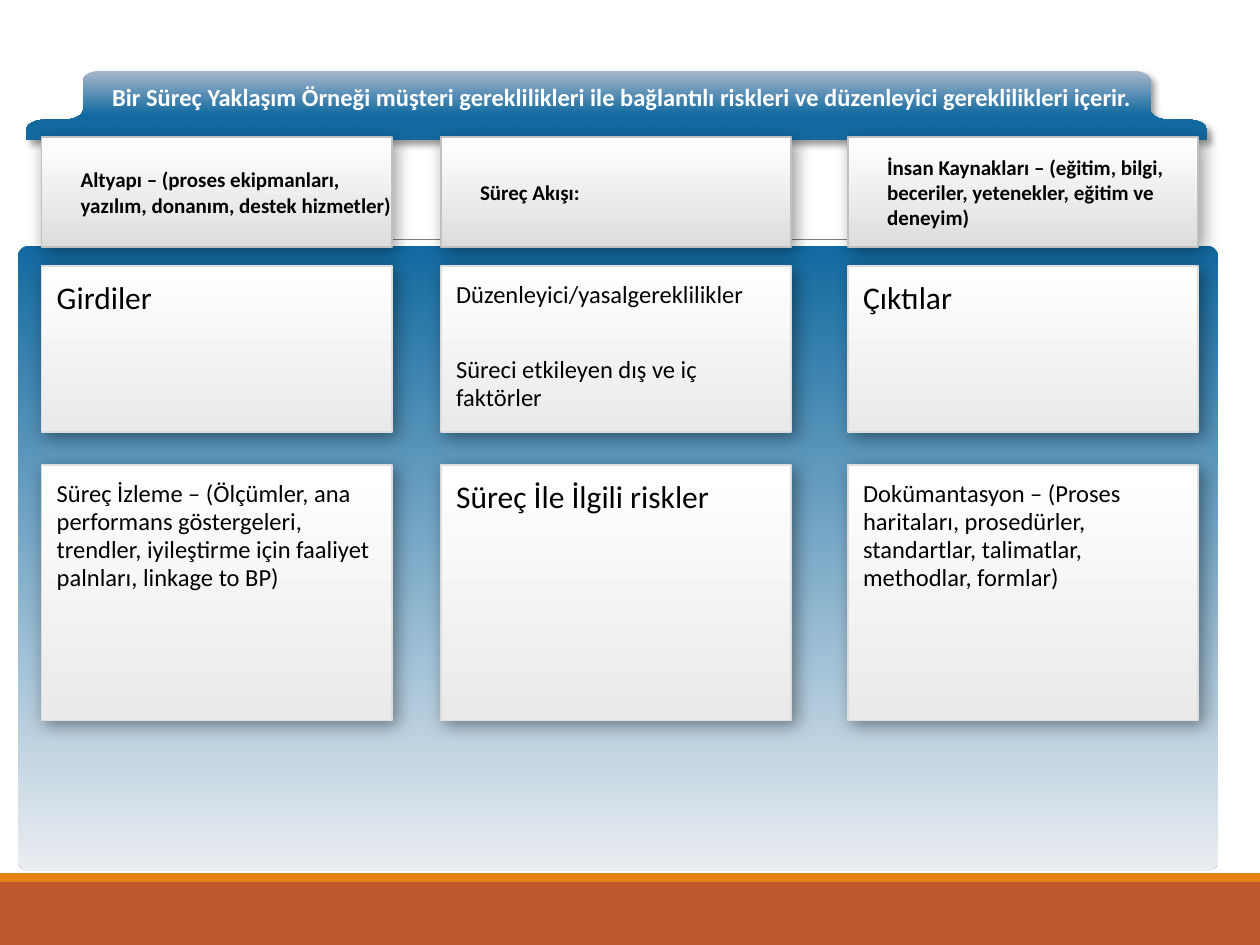
import math
from lxml import etree
from pptx import Presentation
from pptx.dml.color import RGBColor
from pptx.enum.shapes import MSO_CONNECTOR, MSO_SHAPE
from pptx.enum.text import MSO_ANCHOR, PP_ALIGN
from pptx.oxml.ns import qn
from pptx.util import Inches, Pt

RECT, ROUND = MSO_SHAPE.RECTANGLE, MSO_SHAPE.ROUNDED_RECTANGLE
TOP, MIDDLE, LEFT = MSO_ANCHOR.TOP, MSO_ANCHOR.MIDDLE, PP_ALIGN.LEFT

BLACK = RGBColor(0x00, 0x00, 0x00)
WHITE = RGBColor(0xFF, 0xFF, 0xFF)
BLUE = RGBColor(0x12, 0x6A, 0xA0)
BLUE_GREY = RGBColor(0xAA, 0xB8, 0xCC)
PALE = RGBColor(0xEA, 0xED, 0xF1)
HEAD_END = RGBColor(0xDD, 0xDD, 0xDD)
HEAD_LINE = RGBColor(0xC0, 0xC0, 0xC0)
CARD_END = RGBColor(0xEA, 0xEA, 0xEA)
CARD_LINE = RGBColor(0xDD, 0xDD, 0xDD)
RULE = RGBColor(0x80, 0x80, 0x80)
RUST = RGBColor(0xBD, 0x58, 0x2C)
ORANGE = RGBColor(0xE4, 0x83, 0x12)

# Content
TITLE = ("Bir Süreç Yaklaşım Örneği müşteri gereklilikleri ile bağlantılı "
         "riskleri ve düzenleyici gereklilikleri içerir.")
HEADS = [
    "Altyapı – (proses ekipmanları, yazılım, donanım, destek hizmetler)",
    "Süreç Akışı:",
    "İnsan Kaynakları – (eğitim, bilgi, beceriler, yetenekler, eğitim ve deneyim)",
]
INPUT_ROW = [
    (18, ["Girdiler"]),
    (14, ["Düzenleyici/yasalgereklilikler", "Süreci etkileyen dış ve iç faktörler"]),
    (18, ["Çıktılar"]),
]
CONTROL_ROW = [
    (14, ["Süreç İzleme – (Ölçümler, ana performans göstergeleri, trendler, "
          "iyileştirme için faaliyet palnları, linkage to BP)"]),
    (18, ["Süreç İle İlgili riskler"]),
    (14, ["Dokümantasyon – (Proses haritaları, prosedürler, standartlar, "
          "talimatlar, methodlar, formlar)"]),
]

# Grid
COLS = [0.33, 3.5, 6.73]
COL_W = 2.78
HEAD_Y, HEAD_H = 1.09, 0.87
CARD_ROWS = [(2.11, 1.32, INPUT_ROW), (3.69, 2.03, CONTROL_ROW)]


def gradient(sp, start, end, end_pos=1.0):
    sp.fill.gradient()
    sp.fill.gradient_angle = 270
    first, last = sp.fill.gradient_stops
    first.color.rgb, first.position = start, 0
    last.color.rgb, last.position = end, end_pos


def drop_shadow(sp, blur):
    sp.shadow.inherit = False
    effects = sp.element.spPr.find(qn("a:effectLst"))
    outer = etree.SubElement(effects, qn("a:outerShdw"), blurRad=str(Pt(blur)),
                             dist=str(Pt(3)), dir=str(45 * 60000),
                             algn="tl", rotWithShape="0")
    color = etree.SubElement(outer, qn("a:srgbClr"), val="000000")
    etree.SubElement(color, qn("a:alpha"), val="40000")


def add_block(x, y, w, h, kind=RECT, fill=None):
    sp = slide.shapes.add_shape(kind, Inches(x), Inches(y), Inches(w), Inches(h))
    sp.shadow.inherit = False
    sp.line.fill.background()
    if fill is not None:
        sp.fill.solid()
        sp.fill.fore_color.rgb = fill
    return sp


def set_text(sp, paragraphs, size, color, anchor, insets, bold=False, spacing=1.0):
    tf = sp.text_frame
    tf.word_wrap = True
    tf.vertical_anchor = anchor
    tf.margin_left, tf.margin_top, tf.margin_right, tf.margin_bottom = map(Inches, insets)
    tf.text = "\n".join(paragraphs)
    for i, p in enumerate(tf.paragraphs):
        p.alignment = LEFT
        p.line_spacing = spacing
        p.space_before = Pt(27 if i else 0)
        for r in p.runs:
            r.font.name, r.font.size, r.font.bold = "Calibri", Pt(size), bold
            r.font.color.rgb = color


def add_panel(x, y, h, end, line):
    sp = add_block(x, y, COL_W, h)
    gradient(sp, WHITE, end)
    sp.line.color.rgb, sp.line.width = line, Pt(1)
    drop_shadow(sp, 10)
    return sp


def corner(start, bend, end, steps=10):
    """Quarter ellipse from start to end, rounding off the bend."""
    angles = [math.pi / 2 * i / steps for i in range(steps + 1)]
    return [tuple(s + (b - s) * math.sin(t) + (e - b) * (1 - math.cos(t))
                  for s, b, e in zip(start, bend, end)) for t in angles]


prs = Presentation()
prs.slide_width, prs.slide_height = Inches(10), Inches(7.5)
slide = prs.slides.add_slide(prs.slide_layouts[5])

# Footer bands and rule
add_block(0, 7, 10, 0.5, fill=RUST)
add_block(0, 6.93, 10, 0.07, fill=ORANGE)
rule = slide.shapes.add_connector(MSO_CONNECTOR.STRAIGHT, Inches(0.98), Inches(1.9),
                                  Inches(9.15), Inches(1.9))
rule.line.color.rgb, rule.line.width = RULE, Pt(0.5)
etree.SubElement(rule.element.spPr, qn("a:effectLst"))

# Stepped banner: left half, then its mirror
left_half = ([(0.21, 1.11)]
             + corner((0.21, 1.03), (0.21, 0.95), (0.36, 0.95))
             + corner((0.51, 0.95), (0.66, 0.95), (0.66, 0.87))
             + corner((0.66, 0.64), (0.66, 0.56), (0.82, 0.56)))
outline = left_half + [(9.79 - x, y) for x, y in reversed(left_half)]
points = [(Inches(x), Inches(y)) for x, y in outline]
builder = slide.shapes.build_freeform(*points[0])
builder.add_line_segments(points[1:], close=True)
banner = builder.convert_to_shape()
banner.line.fill.background()
gradient(banner, BLUE_GREY, BLUE, 0.64)
drop_shadow(banner, 4)

# Backdrop
backdrop = add_block(0.14, 1.95, 9.53, 4.96, ROUND)
backdrop.adjustments[0] = 0.018
gradient(backdrop, BLUE, PALE)

# Column heads
for x, text in zip(COLS, HEADS):
    head = add_panel(x, HEAD_Y, HEAD_H, HEAD_END, HEAD_LINE)
    set_text(head, [text], 12, BLACK, MIDDLE, (0.31, 0, 0, 0), bold=True)

# Cards
for y, h, row in CARD_ROWS:
    for x, (size, paragraphs) in zip(COLS, row):
        card = add_panel(x, y, h, CARD_END, CARD_LINE)
        set_text(card, paragraphs, size, BLACK, TOP, (0.12, 0.12, 0.16, 0.08), spacing=0.95)

# Title, in front of the banner
title = slide.shapes.title
title.left, title.top, title.width, title.height = map(Inches, (0.75, 0.6, 8.74, 0.34))
set_text(title, [TITLE], 14, WHITE, TOP, (0.14, 0.05, 0.1, 0.05), bold=True)
title.element.getparent().append(title.element)

prs.save("out.pptx")
